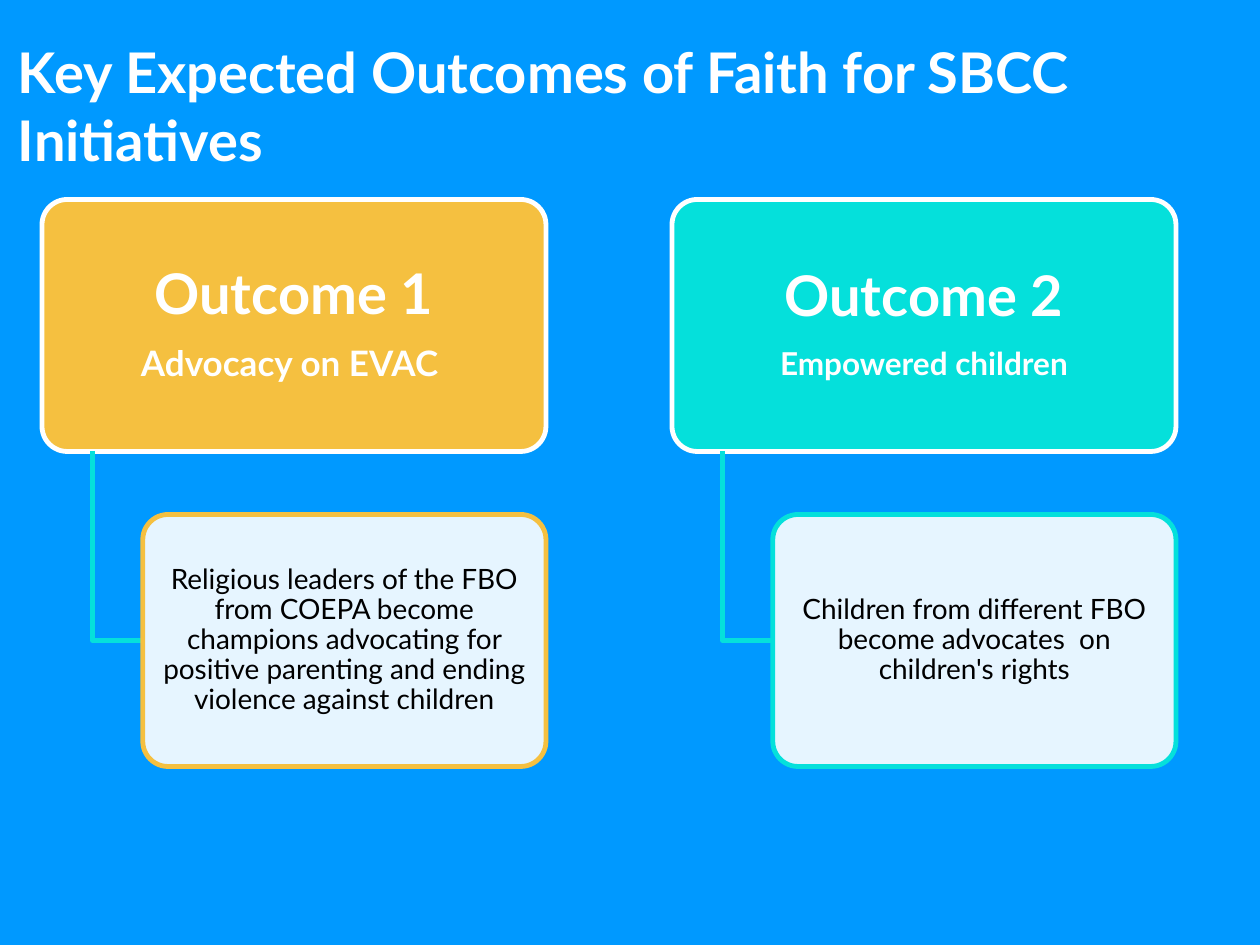
from lxml.etree import SubElement
from pptx import Presentation
from pptx.dml.color import RGBColor
from pptx.enum.shapes import MSO_SHAPE
from pptx.enum.text import MSO_ANCHOR, MSO_AUTO_SIZE, PP_ALIGN
from pptx.oxml.ns import qn
from pptx.util import Pt

BLUE = RGBColor(0x00, 0x99, 0xFF)
AMBER = RGBColor(0xF5, 0xC0, 0x40)
TEAL = RGBColor(0x05, 0xE0, 0xDB)
WHITE = RGBColor(0xFF, 0xFF, 0xFF)
BLACK = RGBColor(0x00, 0x00, 0x00)

# Layout in points
COLUMN_LEFT, COLUMN_STEP = 24, 360
HEADER_TOP, DETAIL_TOP = 114, 294
HEADER_WIDTH, BOX_HEIGHT = 288, 144
BRANCH_INDENT = HEADER_WIDTH / 10
DETAIL_INDENT = 2 * BRANCH_INDENT


class OutcomeSlide:
    font_name = "Lato"
    line_width = Pt(2.75)

    def __init__(self, presentation):
        self.slide = presentation.slides.add_slide(presentation.slide_layouts[5])
        fill = self.slide.background.fill
        fill.solid()
        fill.fore_color.rgb = BLUE

    def format_paragraph(self, paragraph, size, color, bold):
        for run in paragraph.runs:
            run.font.name = self.font_name
            run.font.size = Pt(size)
            run.font.bold = bold
            run.font.color.rgb = color

    def title(self, text, left, top, width, height):
        shape = self.slide.shapes.title
        shape.left, shape.top = Pt(left), Pt(top)
        shape.width, shape.height = Pt(width), Pt(height)
        text_frame = shape.text_frame
        text_frame.text = text
        text_frame.word_wrap = True
        text_frame.auto_size = MSO_AUTO_SIZE.NONE
        text_frame.vertical_anchor = MSO_ANCHOR.TOP
        paragraph = text_frame.paragraphs[0]
        paragraph.alignment = PP_ALIGN.LEFT
        self.format_paragraph(paragraph, 32, WHITE, True)

    def box(self, left, top, width, fill, line, lines, color, bold, insets, opacity=100):
        """Rounded box; lines holds pairs of text and font size."""
        shape = self.slide.shapes.add_shape(
            MSO_SHAPE.ROUNDED_RECTANGLE, Pt(left), Pt(top), Pt(width), Pt(BOX_HEIGHT))
        shape.adjustments[0] = 0.1
        shape.shadow.inherit = False
        shape.fill.solid()
        shape.fill.fore_color.rgb = fill
        if opacity < 100:
            fill_color = shape.fill._xPr.find(qn("a:solidFill"))[0]
            SubElement(fill_color, qn("a:alpha")).set("val", str(opacity * 1000))
        shape.line.color.rgb = line
        shape.line.width = self.line_width

        text_frame = shape.text_frame
        text_frame.text = "\n".join(text for text, size in lines)
        text_frame.word_wrap = True
        text_frame.vertical_anchor = MSO_ANCHOR.MIDDLE
        text_frame.margin_left = text_frame.margin_right = Pt(insets[0])
        text_frame.margin_top = text_frame.margin_bottom = Pt(insets[1])
        for paragraph, (text, size) in zip(text_frame.paragraphs, lines):
            paragraph.alignment = PP_ALIGN.CENTER
            paragraph.line_spacing = 0.9
            paragraph.space_after = Pt(0.35 * size)
            self.format_paragraph(paragraph, size, color, bold)

    def branch(self, left, top, right, bottom):
        builder = self.slide.shapes.build_freeform(Pt(left), Pt(top))
        builder.add_line_segments(
            [(Pt(left), Pt(bottom)), (Pt(right), Pt(bottom))], close=False)
        shape = builder.convert_to_shape()
        shape.shadow.inherit = False
        shape.fill.background()
        shape.line.color.rgb = TEAL
        shape.line.width = self.line_width

    def outcome(self, left, color, header, detail):
        detail_left = left + DETAIL_INDENT
        self.box(left, HEADER_TOP, HEADER_WIDTH, color, WHITE, header,
                 WHITE, True, (5, 3))
        self.branch(left + BRANCH_INDENT, HEADER_TOP + BOX_HEIGHT,
                    detail_left, DETAIL_TOP + BOX_HEIGHT / 2)
        self.box(detail_left, DETAIL_TOP, HEADER_WIDTH - DETAIL_INDENT, WHITE, color,
                 [(detail, 16)], BLACK, False, (2.25, 1.5), opacity=90)


def main():
    presentation = Presentation()
    presentation.slide_width, presentation.slide_height = Pt(720), Pt(540)
    slide = OutcomeSlide(presentation)

    # Title
    slide.title("Key Expected Outcomes of Faith for SBCC Initiatives", 3, 18, 743, 84)

    # Outcome columns
    outcomes = [
        (AMBER, [("Outcome 1", 32), ("Advocacy on EVAC ", 20)],
         "Religious leaders of the FBO from COEPA become champions advocating for "
         "positive parenting and ending violence against children"),
        (TEAL, [("Outcome 2", 32), ("Empowered children", 18)],
         "Children from different FBO become advocates  on children's rights"),
    ]
    for index, (color, header, detail) in enumerate(outcomes):
        slide.outcome(COLUMN_LEFT + index * COLUMN_STEP, color, header, detail)

    presentation.save("out.pptx")


if __name__ == "__main__":
    main()
